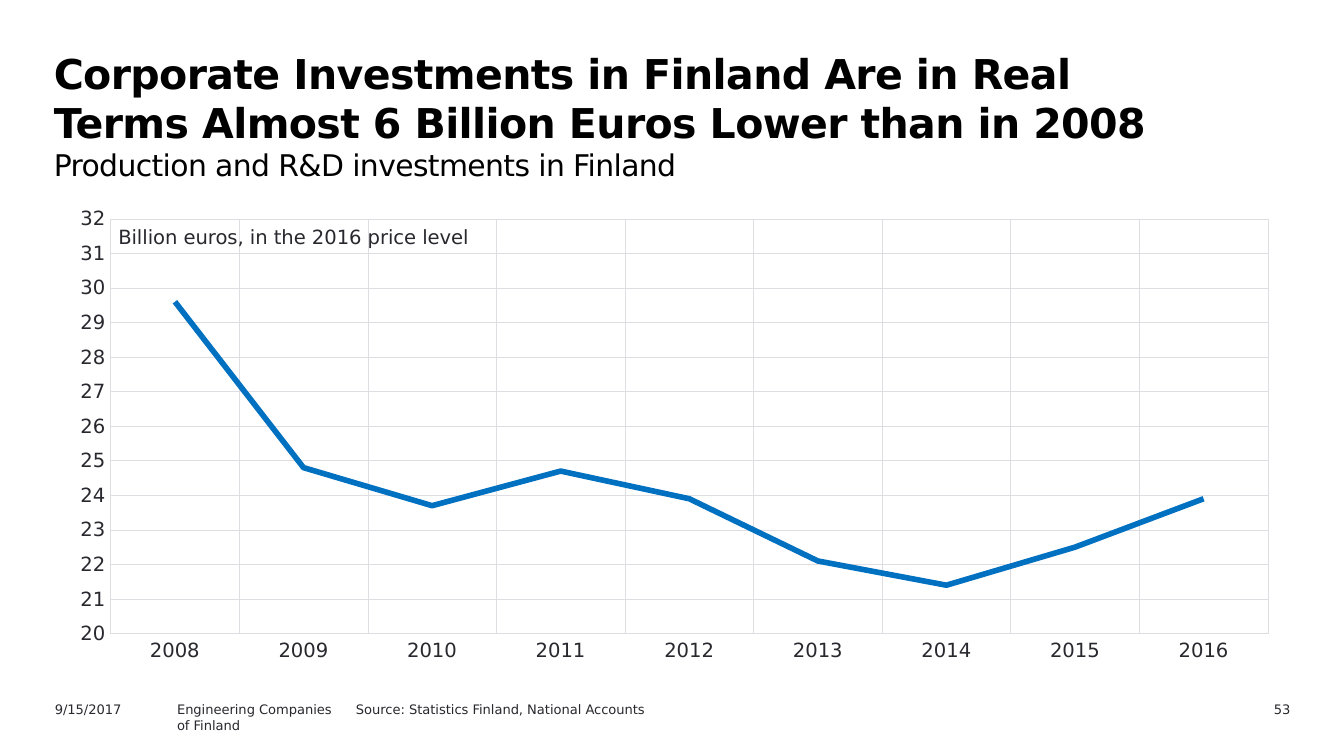
from pptx import Presentation
from pptx.chart.data import CategoryChartData
from pptx.dml.color import RGBColor
from pptx.enum.chart import XL_CHART_TYPE, XL_TICK_MARK
from pptx.enum.text import MSO_ANCHOR, MSO_AUTO_SIZE, PP_ALIGN
from pptx.oxml import parse_xml
from pptx.oxml.ns import nsdecls
from pptx.util import Pt

INK, GRID, BLUE = "29282E", "DEDDE1", "0070C0"


def paint(target, color):
    target.rgb = RGBColor.from_string(color)


def style(font, size, color=INK, bold=False):
    for key, value in dict(name="DejaVu Sans", size=Pt(size), bold=bold).items():
        setattr(font, key, value)
    paint(font.color, color)


deck = Presentation()
deck.slide_width, deck.slide_height = Pt(720), Pt(405)
slide = deck.slides.add_slide(deck.slide_layouts[5])

title = slide.shapes.title
place = dict(left=Pt(20.2), top=Pt(22.3), width=Pt(629.3), height=Pt(51.1))
for key, value in place.items():
    setattr(title, key, value)
frame = title.text_frame
frame.auto_size = MSO_AUTO_SIZE.NONE
frame.vertical_anchor = MSO_ANCHOR.TOP
frame.margin_left = Pt(8.6)
line = frame.paragraphs[0]
line.alignment = PP_ALIGN.LEFT
heads = [
    ("Corporate Investments in Finland Are in Real Terms Almost 6 Billion Euros Lower than in 2008", 22, True),
    ("Production and R&D investments in Finland", 16, False),
]
for index, (text, size, bold) in enumerate(heads):
    if index:
        line.add_line_break()
    run = line.add_run()
    run.text = text
    style(run.font, size, "000000", bold)
    run.font._element.set("spc", "-30")

data = CategoryChartData(number_format="#,##0")
data.categories = [str(year) for year in range(2008, 2017)]
data.add_series("Series 1", [29.6, 24.8, 23.7, 24.7, 23.9, 22.1, 21.4, 22.5, 23.9])
chart = slide.shapes.add_chart(
    XL_CHART_TYPE.LINE, Pt(30.2), Pt(105.8), Pt(661), Pt(260), data
).chart
chart.has_title = chart.has_legend = False
style(chart.font, 10.5)
plot = chart.plots[0]
plot.vary_by_categories = False
series = plot.series[0]
series.smooth = False
series.format.line.width = Pt(3)
paint(series.format.line.color, BLUE) if series.format.line.fill.solid() else None
paint(series.format.line.color, BLUE)

years, euros = chart.category_axis, chart.value_axis
for axis in (years, euros):
    axis.major_tick_mark = axis.minor_tick_mark = XL_TICK_MARK.NONE
    axis.has_major_gridlines = True
    rule = axis.major_gridlines.format.line
    rule.width = Pt(0.25)
    paint(rule.color, GRID)
    style(axis.tick_labels.font, 10.5)
years.format.line.width = Pt(0.75)
paint(years.format.line.color, GRID)
euros.format.line.fill.background()
scale = dict(minimum_scale=20, maximum_scale=32, major_unit=1)
for key, value in scale.items():
    setattr(euros, key, value)
euros.tick_labels.number_format = "#,##0"
euros.tick_labels.number_format_is_linked = False

area = chart.element.chart.plotArea
for old in area.xpath("c:layout"):
    area.remove(old)
area.insert(0, parse_xml(
    f'<c:layout {nsdecls("c")}><c:manualLayout><c:layoutTarget val="inner"/>'
    '<c:xMode val="edge"/><c:yMode val="edge"/><c:x val="0.044"/><c:y val="0.044"/>'
    '<c:w val="0.938"/><c:h val="0.855"/></c:manualLayout></c:layout>'
))

left, right = PP_ALIGN.LEFT, PP_ALIGN.RIGHT
notes = [
    (["Billion euros, in the 2016 price level"], 60.5, 117.4, 283.7, 18.7, 10.5, 2.9, left),
    (["9/15/2017"], 22.3, 372.2, 72, 13, 7, 7.2, left),
    (["Engineering Companies", "of Finland"], 87.8, 372.2, 129.6, 13, 7, 7.2, left),
    (["Source: Statistics Finland, National Accounts"], 183.6, 372.2, 234, 13, 7, 7.2, left),
    (["53"], 630.7, 372.2, 67.7, 13, 7, 7.2, right),
]
for lines, x, y, wide, high, size, inset, align in notes:
    frame = slide.shapes.add_textbox(Pt(x), Pt(y), Pt(wide), Pt(high)).text_frame
    edges = dict(word_wrap=True, margin_left=Pt(inset), margin_right=Pt(inset),
                 margin_top=Pt(inset / 2 if inset > 3 else inset))
    for key, value in edges.items():
        setattr(frame, key, value)
    frame.text = "\n".join(lines)
    for line in frame.paragraphs:
        line.alignment = align
        style(line.font, size)

deck.save("out.pptx")
